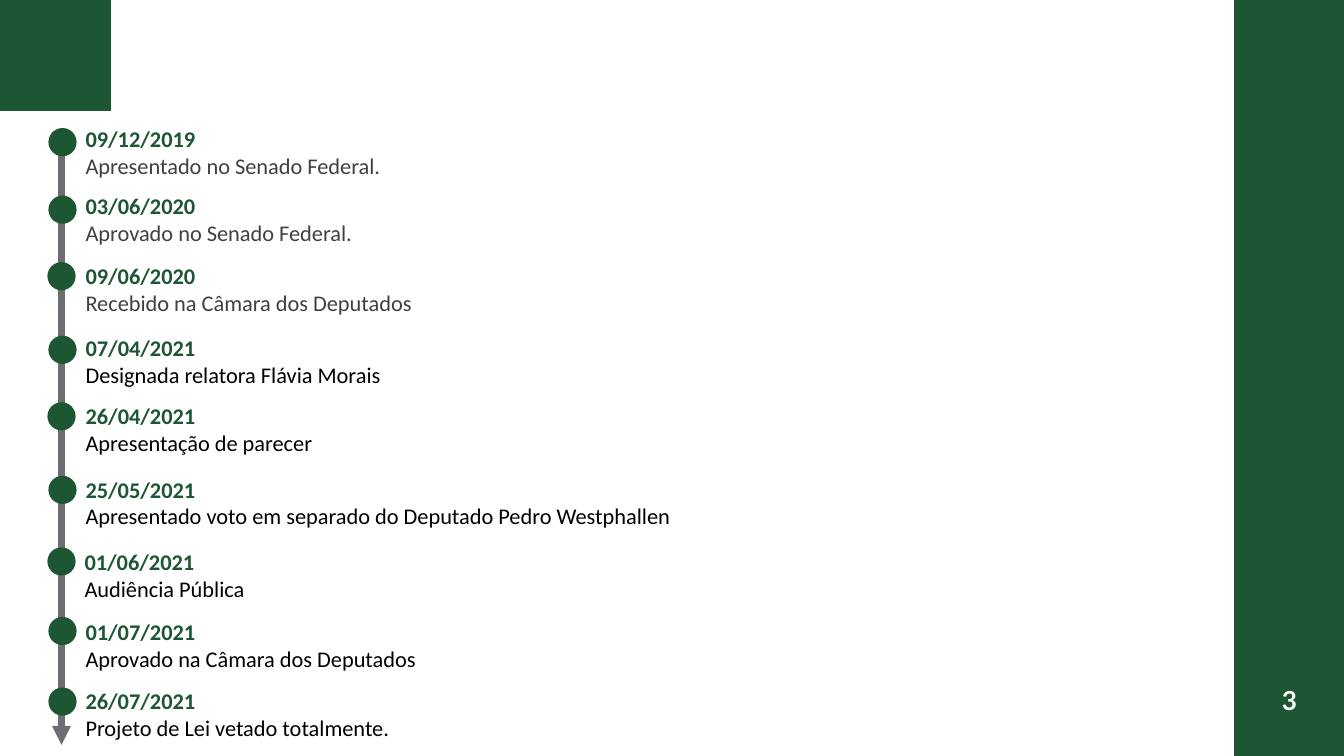
"""Builds a vertical timeline slide on the progress of a bill."""
from pptx import Presentation
from pptx.dml.color import RGBColor
from pptx.enum.shapes import MSO_CONNECTOR, MSO_SHAPE
from pptx.enum.text import MSO_ANCHOR, MSO_AUTO_SIZE, PP_ALIGN
from pptx.oxml.ns import qn
from pptx.util import Inches, Pt
from lxml import etree

GREEN = RGBColor(0x1D, 0x56, 0x32)
GRAY = RGBColor(0x6D, 0x6E, 0x71)
DARK = RGBColor(0x40, 0x40, 0x40)
BLACK = RGBColor(0x00, 0x00, 0x00)
WHITE = RGBColor(0xFF, 0xFF, 0xFF)
RECTANGLE = MSO_SHAPE.RECTANGLE
OVAL = MSO_SHAPE.OVAL
STRAIGHT = MSO_CONNECTOR.STRAIGHT
MIDDLE = MSO_ANCHOR.MIDDLE
CENTER = PP_ALIGN.CENTER
GROW = MSO_AUTO_SIZE.SHAPE_TO_FIT_TEXT

BAND = 1.1
DOT = 0.28
BLANK_LAYOUT = 6

EVENTS = [
    ("09/12/2019", "Apresentado no Senado Federal.", DARK, 0.48, 1.27, 0.75, 1.19, 8.96),
    ("03/06/2020", "Aprovado no Senado Federal.", DARK, 0.48, 1.94, 0.75, 1.86, 8.48),
    ("09/06/2020", "Recebido na Câmara dos Deputados", DARK, 0.47, 2.6, 0.75, 2.55, 7.83),
    ("07/04/2021", "Designada relatora Flávia Morais", BLACK, 0.48, 3.33, 0.75, 3.27, 8.48),
    ("26/04/2021", "Apresentação de parecer", BLACK, 0.47, 3.99, 0.75, 3.94, 8.48),
    ("25/05/2021", "Apresentado voto em separado do Deputado Pedro Westphallen",
     BLACK, 0.48, 4.72, 0.75, 4.67, 10.47),
    ("01/06/2021", "Audiência Pública", BLACK, 0.47, 5.43, 0.74, 5.39, 10.47),
    ("01/07/2021", "Aprovado na Câmara dos Deputados", BLACK, 0.48, 6.12, 0.75, 6.08, 10.47),
    ("26/07/2021", "Projeto de Lei vetado totalmente.", BLACK, 0.48, 6.82, 0.75, 6.77, 10.47),
]


class TimelineSlide:
    """Holds the slide and the style of its elements."""

    def __init__(self, page):
        self.page = page
        self.body_font = "Calibri"
        self.number_font = "Lato"

    def shape(self, kind, left, top, width, height):
        """Adds a plain green shape."""
        shape = self.page.shapes.add_shape(
            kind, Inches(left), Inches(top), Inches(width), Inches(height))
        shape.shadow.inherit = False
        shape.fill.solid()
        shape.fill.fore_color.rgb = GREEN
        shape.line.fill.background()

    def arrow(self, x, top, bottom):
        """Adds the vertical timeline arrow."""
        line = self.page.shapes.add_connector(
            STRAIGHT, Inches(x), Inches(top), Inches(x), Inches(bottom))
        line.line.color.rgb = GRAY
        line.line.width = Pt(4.5)
        etree.SubElement(line.line._get_or_add_ln(), qn("a:tailEnd"), type="triangle")
        etree.SubElement(line._element.spPr, qn("a:effectLst"))

    def text_box(self, left, top, width, height):
        """Adds an empty wrapping text box."""
        box = self.page.shapes.add_textbox(
            Inches(left), Inches(top), Inches(width), Inches(height))
        box.text_frame.word_wrap = True
        return box.text_frame

    def span(self, para, text, font, size, color, bold):
        """Adds one formatted run."""
        span = para.add_run()
        span.text = text
        span.font.name = font
        span.font.size = Pt(size)
        span.font.color.rgb = color
        span.font.bold = bold

    def event(self, date, text, color, dot_left, dot_top, left, top, width):
        """Adds a dot with its date and description."""
        self.shape(OVAL, dot_left, dot_top, DOT, DOT)
        frame = self.text_box(left, top, width, 0.64)
        frame.auto_size = GROW
        para = frame.paragraphs[0]
        self.span(para, date, self.body_font, 16, GREEN, True)
        para.add_line_break()
        self.span(para, text, self.body_font, 16, color, False)

    def page_number(self, number, left, top, side):
        """Adds the centred page number."""
        frame = self.text_box(left, top, side, side)
        frame.margin_left = frame.margin_right = 0
        frame.margin_top = frame.margin_bottom = 0
        frame.vertical_anchor = MIDDLE
        para = frame.paragraphs[0]
        para.alignment = CENTER
        self.span(para, number, self.number_font, 18.7, WHITE, True)


def main():
    """Builds and saves the deck."""
    deck = Presentation()
    deck.slide_width = Inches(13.33)
    deck.slide_height = Inches(7.5)
    timeline = TimelineSlide(deck.slides.add_slide(deck.slide_layouts[BLANK_LAYOUT]))
    timeline.shape(RECTANGLE, 12.24, 0, BAND, 7.5)
    timeline.shape(RECTANGLE, 0, 0, BAND, BAND)
    timeline.arrow(0.61, 1.4, 7.39)
    timeline.page_number("3", 12.24, 6.4, BAND)
    for event in EVENTS:
        timeline.event(*event)
    deck.save("out.pptx")


if __name__ == "__main__":
    main()
